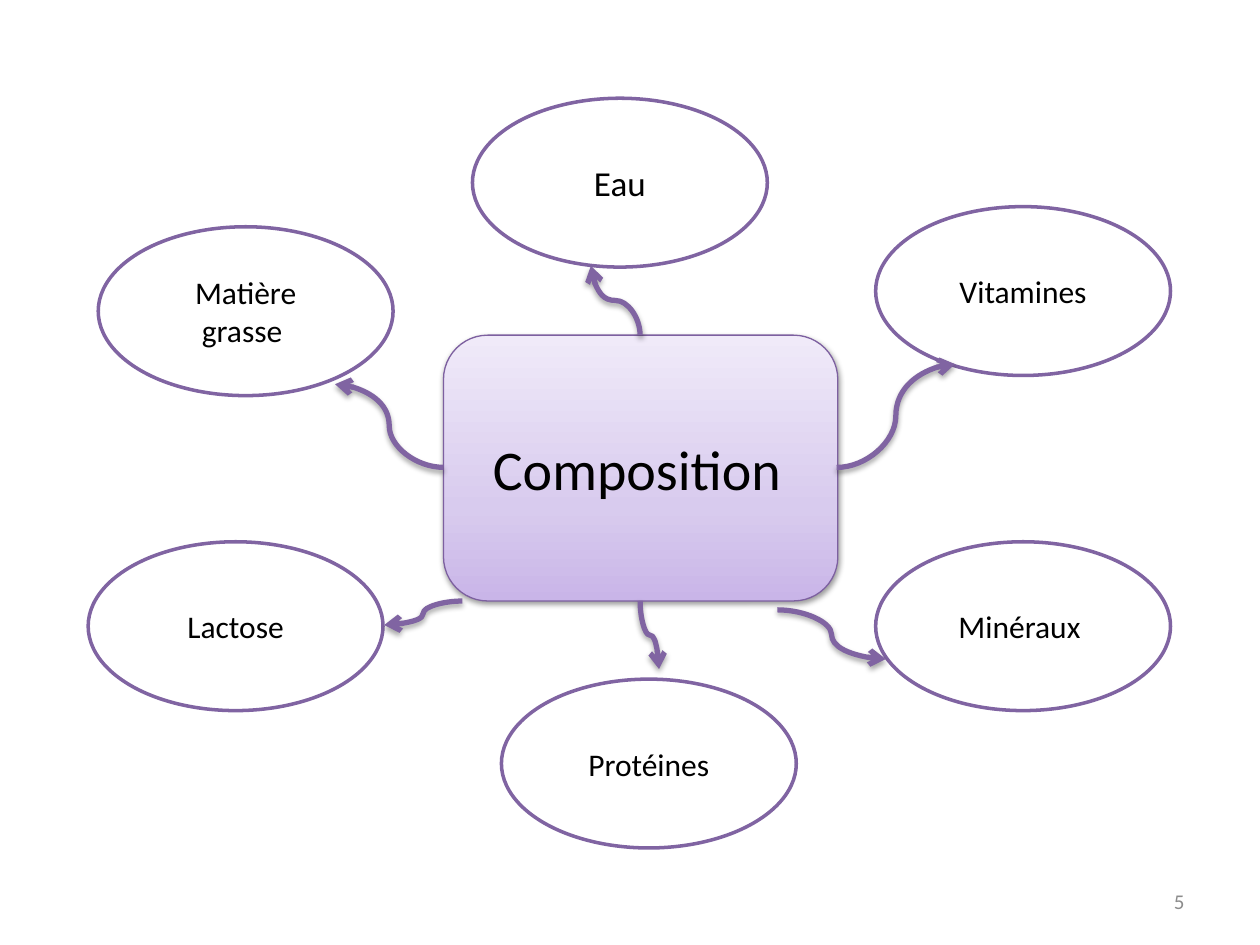
"""Draw the composition mind map with six nodes around a central box."""
from copy import deepcopy
from dataclasses import dataclass

from pptx import Presentation
from pptx.dml.color import RGBColor
from pptx.enum.shapes import MSO_CONNECTOR as Conn, MSO_SHAPE as Kind
from pptx.enum.text import MSO_ANCHOR as Anchor, PP_ALIGN as Align
from pptx.oxml import parse_xml
from pptx.oxml.ns import nsdecls, qn
from pptx.util import Inches, Pt

BLACK = RGBColor(0, 0, 0)
WHITE = RGBColor(255, 255, 255)
GREY = RGBColor(0x8C, 0x8C, 0x8C)
PURPLE = RGBColor(0x80, 0x64, 0xA2)
EDGE = RGBColor(0x7D, 0x60, 0xA0)
SHADES = [
    (0, RGBColor(0xC9, 0xB5, 0xE8)),
    (0.35, RGBColor(0xD8, 0xCB, 0xEE)),
    (1, RGBColor(0xF0, 0xEA, 0xF9)),
]
FONT = "Calibri"
WIDE, HIGH = 2.34, 1.34


@dataclass
class Node:
    text: str
    left: float
    top: float
    size: int = 18


@dataclass
class Link:
    start: tuple[float, float]
    end: tuple[float, float]
    upright: bool = False


NODES = [
    Node("Matière grasse ", 0.78, 1.8),
    Node("Protéines", 3.98, 5.39),
    Node("Eau", 3.75, 0.78, 20),
    Node("Lactose", 0.7, 4.3),
    Node("Minéraux ", 6.95, 4.3),
    Node("Vitamines", 6.95, 1.64),
]
LINKS = [
    Link((6.64, 3.71), (7.58, 2.89)),
    Link((3.52, 3.71), (2.66, 3.05)),
    Link((5.08, 2.66), (4.69, 2.11), True),
    Link((6.17, 4.84), (7.03, 5.23)),
    Link((3.67, 4.77), (3.05, 4.96)),
    Link((5.08, 4.77), (5.23, 5.31), True),
]


def write(shape, runs: list[tuple[str, int]], color: RGBColor, align) -> None:
    frame = shape.text_frame
    frame.word_wrap = True
    frame.vertical_anchor = Anchor.MIDDLE
    para = frame.paragraphs[0]
    para.alignment = align
    for text, size in runs:
        run = para.add_run()
        run.text = text
        run.font.name = FONT
        run.font.size = Pt(size)
        run.font.color.rgb = color


def shade(props, alpha: int, dist: float) -> None:
    for old in props.findall(qn("a:effectLst")):
        props.remove(old)
    props.append(parse_xml(
        f'<a:effectLst {nsdecls("a")}><a:outerShdw blurRad="{Pt(3.15)}" '
        f'dist="{Pt(dist)}" dir="5400000" rotWithShape="0">'
        f'<a:srgbClr val="000000"><a:alpha val="{alpha * 1000}"/></a:srgbClr>'
        '</a:outerShdw></a:effectLst>'))


def add_hub(shapes) -> None:
    hub = shapes.add_shape(
        Kind.ROUNDED_RECTANGLE, Inches(3.52), Inches(2.66), Inches(3.13), Inches(2.11))
    fill = hub.fill
    fill.gradient()
    fill.gradient_angle = 90
    stops = hub.element.spPr.find(qn("a:gradFill")).find(qn("a:gsLst"))
    stops.append(deepcopy(stops[0]))
    for stop, (place, color) in zip(fill.gradient_stops, SHADES):
        stop.position = place
        stop.color.rgb = color
    hub.line.color.rgb = EDGE
    hub.line.width = Pt(0.75)
    shade(hub.element.spPr, 38, 1.6)
    write(hub, [("Composition", 32), (" ", 18)], BLACK, Align.CENTER)


def add_node(shapes, node: Node) -> None:
    oval = shapes.add_shape(
        Kind.OVAL, Inches(node.left), Inches(node.top), Inches(WIDE), Inches(HIGH))
    oval.shadow.inherit = False
    oval.fill.solid()
    oval.fill.fore_color.rgb = WHITE
    oval.line.color.rgb = PURPLE
    oval.line.width = Pt(2)
    write(oval, [(node.text, node.size)], BLACK, Align.CENTER)


def add_link(shapes, link: Link) -> None:
    (x1, y1), (x2, y2) = link.start, link.end
    if link.upright:
        mid_x, mid_y = (x1 + x2) / 2, (y1 + y2) / 2
        half_x, half_y = (y1 - y2) / 2, (x2 - x1) / 2
        x1, x2 = mid_x - half_x, mid_x + half_x
        y1, y2 = mid_y - half_y, mid_y + half_y
    curve = shapes.add_connector(
        Conn.CURVE, Inches(x1), Inches(y1), Inches(x2), Inches(y2))
    curve.line.color.rgb = PURPLE
    curve.line.width = Pt(3)
    props = curve.element.spPr
    if link.upright:
        props.find(qn("a:xfrm")).set("rot", str(270 * 60000))
    props.find(qn("a:ln")).append(
        parse_xml(f'<a:tailEnd {nsdecls("a")} type="arrow"/>'))
    shade(props, 35, 1.8)


def main() -> None:
    deck = Presentation()
    deck.slide_width, deck.slide_height = Inches(10), Inches(7.5)
    shapes = deck.slides.add_slide(deck.slide_layouts[6]).shapes
    add_hub(shapes)
    for node in NODES:
        add_node(shapes, node)
    for link in LINKS:
        add_link(shapes, link)
    page = shapes.add_textbox(Inches(7.17), Inches(6.95), Inches(2.33), Inches(0.4))
    write(page, [("5", 12)], GREY, Align.RIGHT)
    deck.save("out.pptx")


if __name__ == "__main__":
    main()
